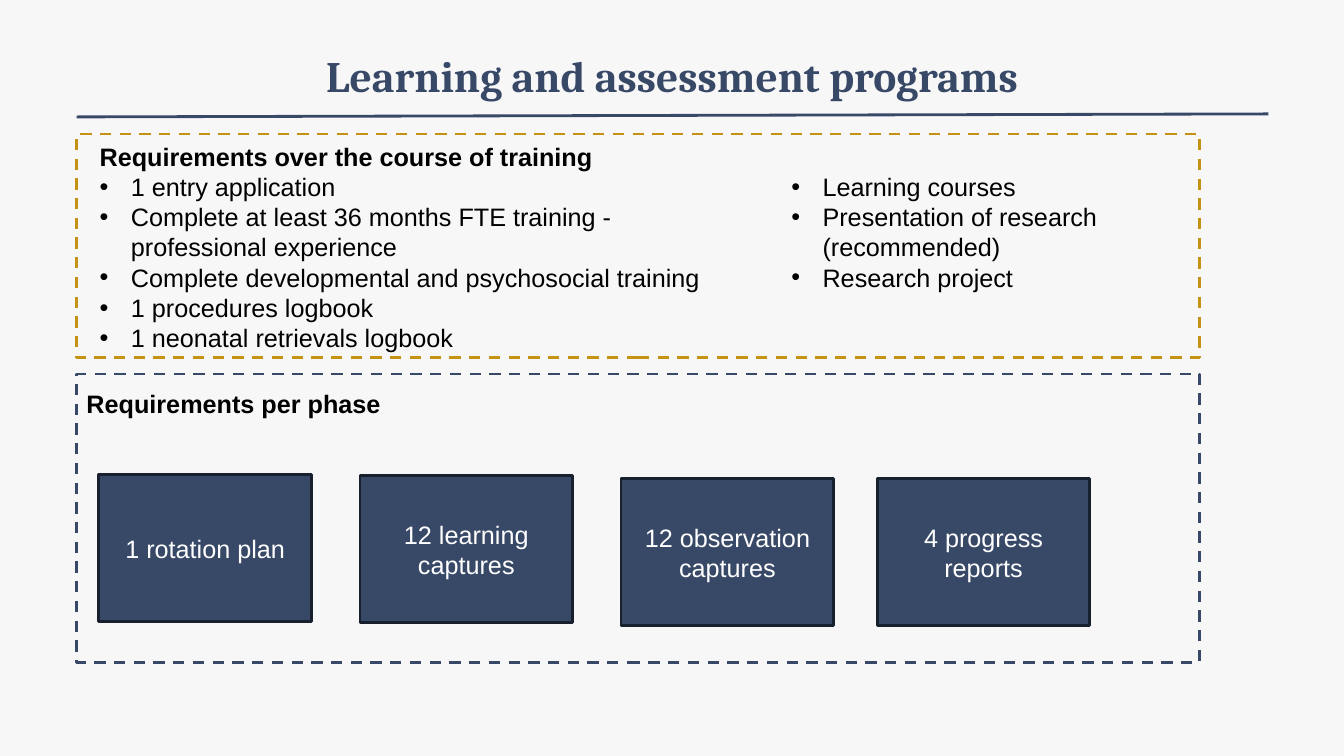
from dataclasses import dataclass

from lxml import etree
from pptx import Presentation
from pptx.dml.color import RGBColor
from pptx.enum.dml import MSO_LINE
from pptx.enum.shapes import MSO_CONNECTOR, MSO_SHAPE
from pptx.enum.text import MSO_ANCHOR, MSO_AUTO_SIZE, PP_ALIGN
from pptx.oxml.ns import qn
from pptx.util import Inches, Pt

RECTANGLE = MSO_SHAPE.RECTANGLE
STRAIGHT = MSO_CONNECTOR.STRAIGHT
DASH = MSO_LINE.DASH
MIDDLE, TOP = MSO_ANCHOR.MIDDLE, MSO_ANCHOR.TOP
CENTER, LEFT = PP_ALIGN.CENTER, PP_ALIGN.LEFT
NO_AUTOFIT = MSO_AUTO_SIZE.NONE
TITLE_ONLY = 5

TITLE = "Learning and assessment programs"
TRAINING_HEADING = "Requirements over the course of training"
TRAINING_ITEMS = [
    "1 entry application",
    "Complete at least 36 months FTE training - professional experience",
    "Complete developmental and psychosocial training",
    "1 procedures logbook",
    "1 neonatal retrievals logbook",
]
RESEARCH_ITEMS = [
    "Learning courses",
    "Presentation of research (recommended)",
    "Research project",
]
PHASE_HEADING = "Requirements per phase"
PHASE_CARDS = [
    ("1 rotation plan", 0.98, 4.71),
    ("12 learning captures", 3.57, 4.72),
    ("12 observation captures", 6.16, 4.75),
    ("4 progress reports", 8.7, 4.75),
]
CARD_SIZE = (2.11, 1.46)
PANEL_LEFT, PANEL_WIDTH = 0.76, 11.14
BULLET_INDENT = 0.31


@dataclass(frozen=True)
class Theme:
    background: RGBColor = RGBColor.from_string("F7F7F7")
    navy: RGBColor = RGBColor.from_string("384967")
    gold: RGBColor = RGBColor.from_string("C69214")
    card_edge: RGBColor = RGBColor.from_string("19202D")
    black: RGBColor = RGBColor.from_string("000000")
    white: RGBColor = RGBColor.from_string("FFFFFF")
    heading_font: str = "Cambria"
    body_font: str = "Arial"
    title_size: int = 31
    body_size: int = 18
    line_width: int = 2


THEME = Theme()


def inches(*lengths):
    return [Inches(length) for length in lengths]


def format_paragraph(paragraph, color, bold=False, font=THEME.body_font,
                     size=THEME.body_size, align=LEFT):
    paragraph.alignment = align
    for run in paragraph.runs:
        run.font.name = font
        run.font.size = Pt(size)
        run.font.bold = bold
        run.font.color.rgb = color


def add_bullet(paragraph):
    properties = paragraph._p.get_or_add_pPr()
    properties.set("marL", str(Inches(BULLET_INDENT)))
    properties.set("indent", str(-Inches(BULLET_INDENT)))
    etree.SubElement(properties, qn("a:buFont")).set("typeface", "Arial")
    etree.SubElement(properties, qn("a:buChar")).set("char", "•")


def add_requirements(slide, box, items, heading=None):
    frame = slide.shapes.add_textbox(*inches(*box)).text_frame
    frame.word_wrap = True
    lines = ([heading] if heading else []) + items
    frame.text = "\n".join(lines)
    for paragraph in frame.paragraphs:
        is_heading = paragraph.text == heading
        if not is_heading:
            add_bullet(paragraph)
        format_paragraph(paragraph, THEME.black, bold=is_heading)


def add_rectangle(slide, box, edge):
    rectangle = slide.shapes.add_shape(RECTANGLE, *inches(*box))
    rectangle.shadow.inherit = False
    rectangle.line.color.rgb = edge
    rectangle.line.width = Pt(THEME.line_width)
    return rectangle


def add_panel(slide, top, height, edge):
    panel = add_rectangle(slide, (PANEL_LEFT, top, PANEL_WIDTH, height), edge)
    panel.fill.background()
    panel.line.dash_style = DASH


def add_card(slide, label, left, top):
    card = add_rectangle(slide, (left, top, *CARD_SIZE), THEME.card_edge)
    card.fill.solid()
    card.fill.fore_color.rgb = THEME.navy
    frame = card.text_frame
    frame.text = label
    frame.word_wrap = True
    frame.vertical_anchor = MIDDLE
    format_paragraph(frame.paragraphs[0], THEME.white, align=CENTER)


def add_title(slide):
    title = slide.shapes.title
    title.left, title.top, title.width, title.height = inches(1.66, 0.29, 10.01, 0.91)
    frame = title.text_frame
    frame.text = TITLE
    frame.word_wrap = True
    frame.auto_size = NO_AUTOFIT
    frame.vertical_anchor = MIDDLE
    frame.margin_left = frame.margin_right = Inches(0.07)
    frame.margin_top = frame.margin_bottom = Inches(0.04)
    format_paragraph(frame.paragraphs[0], THEME.navy, bold=True,
                     font=THEME.heading_font, size=THEME.title_size, align=CENTER)

    rule = slide.shapes.add_connector(STRAIGHT, *inches(PANEL_LEFT, 1.16, 12.58, 1.13))
    rule.line.color.rgb = THEME.navy
    rule.line.width = Pt(THEME.line_width)
    etree.SubElement(rule._element.spPr, qn("a:effectLst"))


def main():
    presentation = Presentation()
    presentation.slide_width, presentation.slide_height = inches(13.33, 7.5)
    slide = presentation.slides.add_slide(presentation.slide_layouts[TITLE_ONLY])
    slide.background.fill.solid()
    slide.background.fill.fore_color.rgb = THEME.background

    add_title(slide)
    add_panel(slide, 1.33, 2.22, THEME.gold)
    add_requirements(slide, (0.89, 1.35, 6.62, 2.22), TRAINING_ITEMS, TRAINING_HEADING)
    add_requirements(slide, (7.75, 1.65, 4.68, 1.31), RESEARCH_ITEMS)

    add_panel(slide, 3.71, 2.86, THEME.navy)
    add_requirements(slide, (PANEL_LEFT, 3.8, 6.67, 0.4), [], PHASE_HEADING)
    for label, left, top in PHASE_CARDS:
        add_card(slide, label, left, top)

    presentation.save("out.pptx")


if __name__ == "__main__":
    main()
